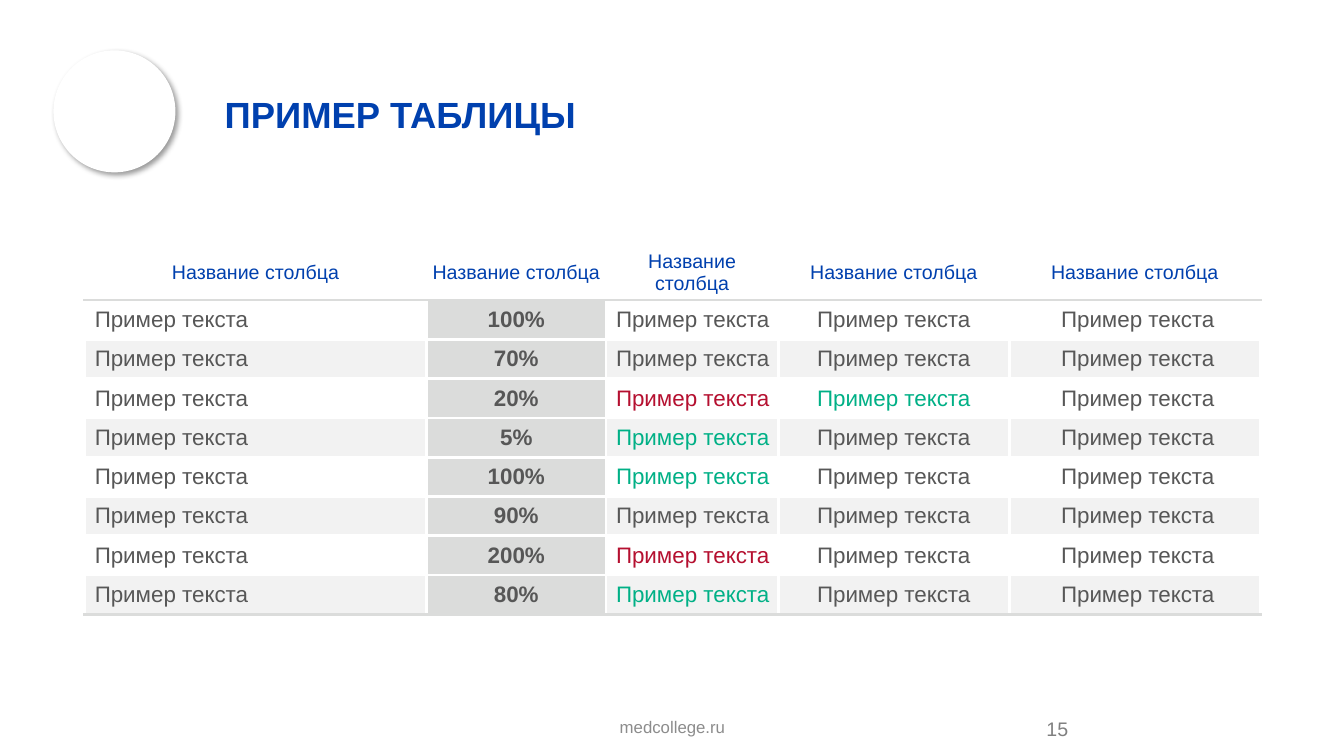
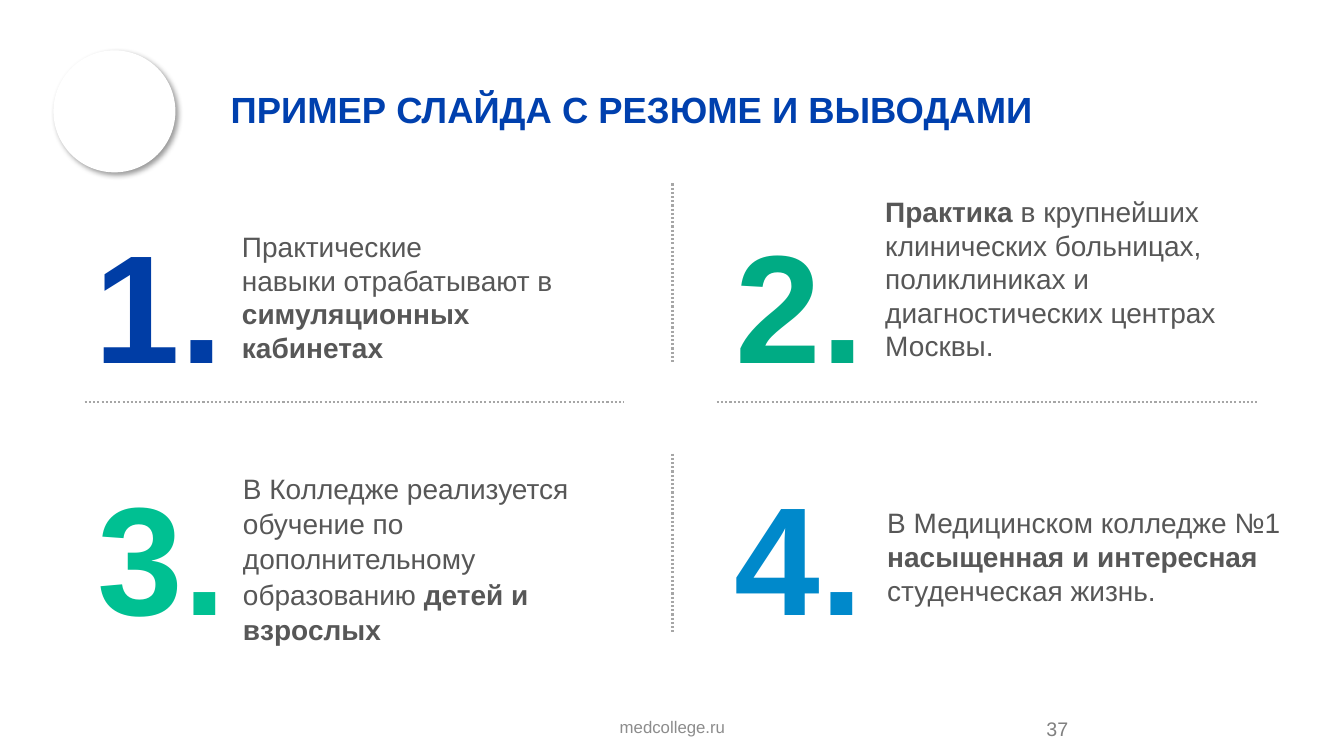
import pptx
import pptx.dml.color
import pptx.enum.dml
import pptx.enum.shapes
import pptx.enum.text
import pptx.oxml
import pptx.oxml.ns
import pptx.util

Inches = pptx.util.Inches
Pt = pptx.util.Pt
ALIGN = pptx.enum.text.PP_ALIGN
ANCHOR = pptx.enum.text.MSO_ANCHOR
FONT = "Arial"
BLUE = "0040AE"
GRAY = "575757"
RED = "B51030"
GREEN = "00B086"
WHITE = "FFFFFF"
BAND = "F2F2F2"
RULE = "DBDCDB"
DOTS = "A6A6A6"
NAMESPACE = pptx.oxml.ns.nsdecls("a")


def rgb(value):
    return pptx.dml.color.RGBColor.from_string(value)


def add_text(slide, box, pieces, size, color, align=ALIGN.LEFT,
             anchor=ANCHOR.TOP, inset=(0.05, 0.05), spacing=None):
    shape = slide.shapes.add_textbox(*[Inches(value) for value in box])
    frame = shape.text_frame
    frame.word_wrap = True
    frame.vertical_anchor = anchor
    frame.margin_left = frame.margin_right = Inches(inset[0])
    frame.margin_top = frame.margin_bottom = Inches(inset[1])
    paragraph = frame.paragraphs[0]
    paragraph.alignment = align
    paragraph.line_spacing = spacing
    for text, bold in pieces:
        for index, line in enumerate(text.split("\n")):
            if index:
                paragraph.add_line_break()
            run = paragraph.add_run()
            run.text = line
            run.font.name = FONT
            run.font.size = Pt(size)
            run.font.bold = bold
            run.font.color.rgb = rgb(color)


presentation = pptx.Presentation()
presentation.slide_width = Inches(13.33)
presentation.slide_height = Inches(7.5)

slides = []
for title, left, top, number in [
    ("ПРИМЕР ТАБЛИЦЫ", 2.13, 0.55, "15"),
    ("ПРИМЕР СЛАЙДА С РЕЗЮМЕ И ВЫВОДАМИ", 2.19, 0.5, "37"),
]:
    slide = presentation.slides.add_slide(presentation.slide_layouts[6])
    slides.append(slide)
    badge = slide.shapes.add_shape(
        pptx.enum.shapes.MSO_SHAPE.OVAL,
        Inches(0.53), Inches(0.5), Inches(1.21), Inches(1.21))
    badge.fill.solid()
    badge.fill.fore_color.rgb = rgb(WHITE)
    badge.line.fill.background()
    badge._element.spPr.append(pptx.oxml.parse_xml(
        f'<a:effectLst {NAMESPACE}><a:outerShdw blurRad="{Pt(4)}" dist="{Pt(3)}" '
        'dir="2700000" algn="tl" rotWithShape="0"><a:srgbClr val="000000">'
        '<a:alpha val="40000"/></a:srgbClr></a:outerShdw></a:effectLst>'))
    add_text(slide, (left, top, 10.4, 1.21), [(title, True)], 26, BLUE,
             anchor=ANCHOR.MIDDLE, inset=(0.1, 0.04), spacing=0.9)
    add_text(slide, (4.42, 7.06, 4.5, 0.4), [("medcollege.ru", False)], 12, "8C8C8C",
             align=ALIGN.CENTER, inset=(0.1, 0.05))
    add_text(slide, (10.28, 7.02, 1.88, 0.41), [(number, False)], 14, "808080",
             anchor=ANCHOR.MIDDLE, inset=(0.1, 0.05))

table_slide, summary_slide = slides

percents = ["100%", "70%", "20%", "5%", "100%", "90%", "200%", "80%"]
column_widths = [3.39, 1.78, 1.71, 2.29, 2.49]
accents = {(3, 2): RED, (3, 3): GREEN, (4, 2): GREEN,
           (5, 2): GREEN, (7, 2): RED, (8, 2): GREEN}
last_row = len(percents)
table = table_slide.shapes.add_table(
    last_row + 1, len(column_widths),
    Inches(0.84), Inches(2.43), Inches(11.66), Inches(3.53)).table
table.first_row = False
table.horz_banding = False
for column, width in zip(table.columns, column_widths):
    column.width = Inches(width)

for row_index, row in enumerate(table.rows):
    header = row_index == 0
    row.height = Inches(0.41 if header else 0.39)
    edge_colors = {
        "lnL": WHITE,
        "lnR": WHITE,
        "lnT": RULE if row_index == 1 else WHITE,
        "lnB": RULE if row_index in (0, last_row) else WHITE,
    }
    for column_index, cell in enumerate(row.cells):
        percent = column_index == 1 and not header
        cell.text = ("Название столбца" if header
                     else percents[row_index - 1] if percent else "Пример текста")
        cell.vertical_anchor = ANCHOR.MIDDLE
        cell.margin_right = cell.margin_top = cell.margin_bottom = Inches(0.04)
        indented = not header and column_index in (0, 2, 4)
        cell.margin_left = Inches(0.1 if indented else 0.04)
        paragraph = cell.text_frame.paragraphs[0]
        left_aligned = not header and column_index in (0, 2)
        paragraph.alignment = ALIGN.LEFT if left_aligned else ALIGN.CENTER
        font = paragraph.runs[0].font
        font.name = FONT
        font.size = Pt(14 if header else 16)
        font.bold = percent
        font.color.rgb = rgb(BLUE if header
                             else accents.get((row_index, column_index), GRAY))
        properties = cell._tc.get_or_add_tcPr()
        for edge, color in edge_colors.items():
            properties.append(pptx.oxml.parse_xml(
                f'<a:{edge} {NAMESPACE} w="{Pt(2.25)}"><a:solidFill>'
                f'<a:srgbClr val="{color}"/></a:solidFill></a:{edge}>'))
        if header:
            cell.fill.background()
        else:
            cell.fill.solid()
            cell.fill.fore_color.rgb = rgb(
                RULE if percent else WHITE if row_index % 2 else BAND)

conclusions = [
    ("1.", "003DA5", (0.89, 2.03), (2.35, 2.23, 4.07, 1.45), None,
     [("Практические \nнавыки отрабатывают в ", False),
      ("симуляционных \nкабинетах", True)]),
    ("2.", "00AB84", (7.25, 2.03), (8.73, 1.88, 4.32, 1.45), None,
     [("Практика", True),
      (" в крупнейших клинических больницах, поликлиниках и "
       "диагностических центрах Москвы.", False)]),
    ("3.", "00C092", (0.92, 4.53), (2.36, 4.61, 4.07, 1.49), 1.05,
     [("В Колледже реализуется обучение по дополнительному образованию ", False),
      ("детей и взрослых", True)]),
    ("4.", "0089CB", (7.24, 4.53), (8.75, 4.97, 4.13, 1.11), None,
     [("В Медицинском колледже №1 ", False),
      ("насыщенная и интересная ", True),
      ("студенческая жизнь.", False)]),
]
for numeral, color, position, box, spacing, pieces in conclusions:
    add_text(summary_slide, (*position, 1.5, 1.95), [(numeral, True)], 110, color)
    add_text(summary_slide, box, pieces, 20, GRAY, spacing=spacing)

for divider in [(6.67, 1.82, 6.67, 3.59), (6.67, 4.5, 6.67, 6.27),
                (0.84, 3.99, 6.19, 3.99), (7.11, 3.99, 12.47, 3.99)]:
    connector = summary_slide.shapes.add_connector(
        pptx.enum.shapes.MSO_CONNECTOR.STRAIGHT,
        *[Inches(value) for value in divider])
    connector.line.color.rgb = rgb(DOTS)
    connector.line.width = Pt(1.5)
    connector.line.dash_style = pptx.enum.dml.MSO_LINE.ROUND_DOT
    connector._element.spPr.append(
        pptx.oxml.parse_xml(f"<a:effectLst {NAMESPACE}/>"))

presentation.save("out.pptx")
